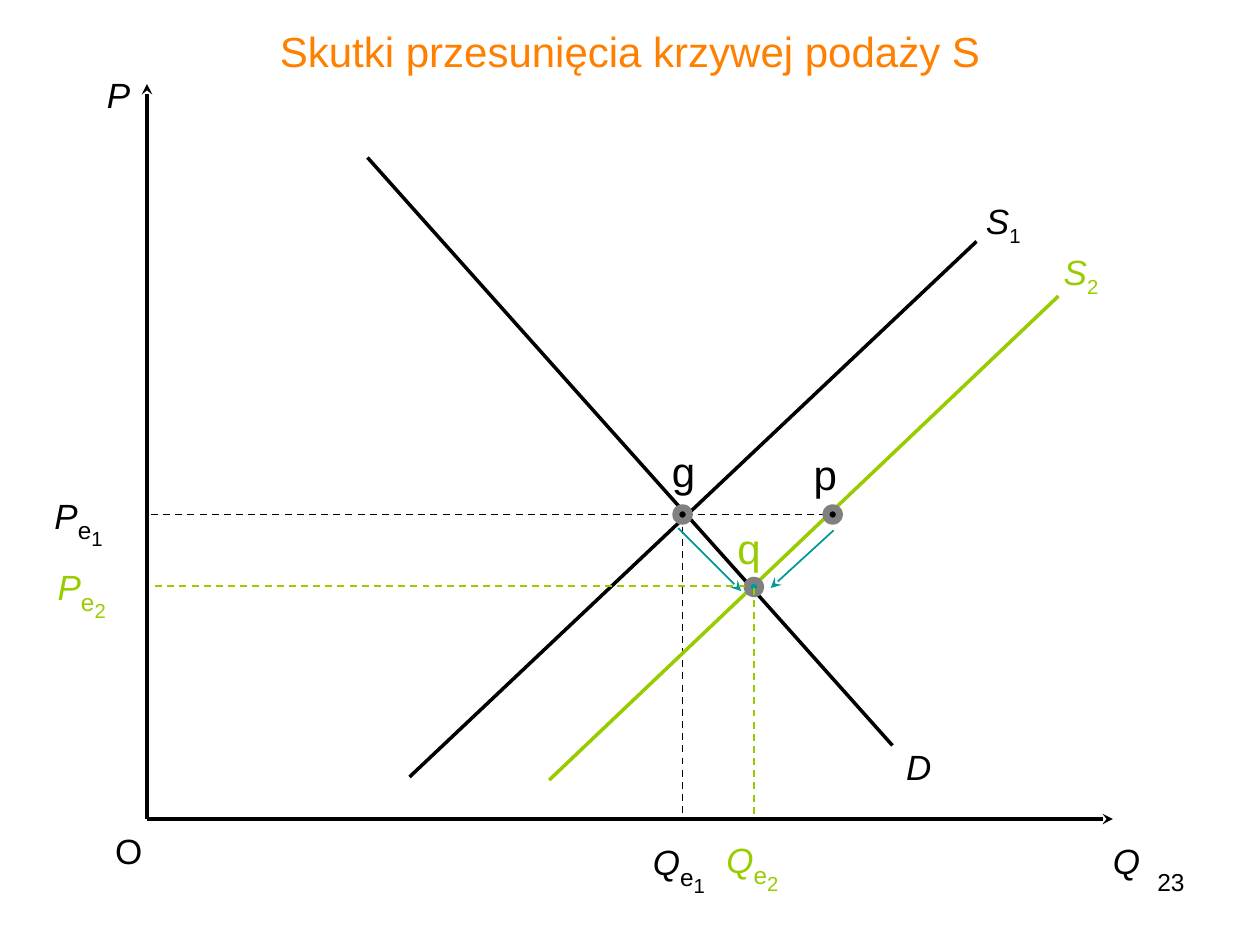
from lxml import etree
from pptx import Presentation
from pptx.dml.color import RGBColor
from pptx.enum import dml, shapes, text
from pptx.oxml import ns
from pptx.util import Pt

COLORS = {"ink": "000000", "shifted": "99CC00", "move": "009999",
          "ring": "808080", "heading": "FF8000"}
COLUMNS, ROWS = 120, 90

deck = Presentation()
deck.slide_width, deck.slide_height = Pt(720), Pt(540)
column, row = deck.slide_width / COLUMNS, deck.slide_height / ROWS
slide = deck.slides.add_slide(deck.slide_layouts[5])


def draw_line(start, end, color, width, dashed=False, arrow=False):
    line = slide.shapes.add_connector(
        shapes.MSO_CONNECTOR.STRAIGHT,
        round(start[0] * column), round(start[1] * row),
        round(end[0] * column), round(end[1] * row))
    line.line.color.rgb = RGBColor.from_string(COLORS[color])
    line.line.width = Pt(width)
    if dashed:
        line.line.dash_style = dml.MSO_LINE.DASH
    if arrow:
        etree.SubElement(line.line._get_or_add_ln(), ns.qn("a:tailEnd"), type="stealth")
    etree.SubElement(line._element.spPr, ns.qn("a:effectLst"))


def write(paragraph, wording, color, size, italic=False, baseline=0):
    run = paragraph.add_run()
    run.text = wording
    styling = {"name": "Arial", "size": Pt(size), "italic": italic, "bold": False}
    for key, value in styling.items():
        setattr(run.font, key, value)
    run.font.color.rgb = RGBColor.from_string(COLORS[color])
    if baseline:
        run._r.get_or_add_rPr().set("baseline", str(baseline * 1000))


heading = slide.shapes.title
heading_place = {"left": round(9 * column), "top": 0,
                 "width": round(102 * column), "height": round(9.7 * row)}
for key, value in heading_place.items():
    setattr(heading, key, value)
heading.text_frame.vertical_anchor = text.MSO_ANCHOR.MIDDLE
heading.text_frame.paragraphs[0].alignment = text.PP_ALIGN.CENTER
write(heading.text_frame.paragraphs[0], "Skutki przesunięcia krzywej podaży S", "heading", 24)

origin = (14, 78)
g, p, q = (65, 49), (79.3, 49), (71.8, 55.9)

for start, end in [((85, 71), (35, 15)), ((93, 23), (39, 74))]:
    draw_line(start, end, "ink", 2)
for start, end in [((78.7, g[1]), (origin[0], g[1])), (g, (g[0], origin[1]))]:
    draw_line(start, end, "ink", 1, dashed=True)
for axis_end in [(106, origin[1]), (origin[0], 8)]:
    draw_line(origin, axis_end, "ink", 2, arrow=True)
draw_line((52.3, 74.3), (100.8, 28.2), "shifted", 2)
for start, end in [((79.4, 50.5), (73.4, 56)), ((64.6, 50.3), (70.6, 56.3))]:
    draw_line(start, end, "move", 1, arrow=True)

DOT = 1.3
for (x, y), color in [(g, "ink"), (p, "ink"), (q, "move")]:
    dot = slide.shapes.add_shape(
        shapes.MSO_SHAPE.OVAL, round((x - DOT / 2) * column), round((y - DOT / 2) * row),
        round(DOT * column), round(DOT * row))
    dot.shadow.inherit = False
    dot.fill.solid()
    dot.fill.fore_color.rgb = RGBColor.from_string(COLORS[color])
    dot.line.color.rgb = RGBColor.from_string(COLORS["ring"])
    dot.line.width = Pt(4)

for start, end in [((71, 55.8), (14.3, 55.8)), ((q[0], 56), (q[0], 77.9))]:
    draw_line(start, end, "shifted", 1, dashed=True)

LEFT, CENTER, RIGHT = text.PP_ALIGN.LEFT, text.PP_ALIGN.CENTER, text.PP_ALIGN.RIGHT
axis_name = {"size": 20, "italic": True}
plain, point = {"size": 20}, {"size": 24}
curve_index = {"size": 20, "baseline": -25}
equilibrium = {"size": 24, "baseline": -25}
equilibrium_index = {"size": 20, "baseline": -50}
labels = [
    (9, 6.4, 4.4, 5.2, "ink", LEFT, True, [("P", axis_name)]),
    (104.8, 79.4, 5, 5.2, "ink", LEFT, False, [("Q", axis_name)]),
    (9.8, 78.4, 5, 5.2, "ink", LEFT, False, [("O", plain)]),
    (85.1, 70.4, 4.8, 5.2, "ink", CENTER, False, [("D", axis_name)]),
    (62.8, 41.8, 4.7, 6, "ink", LEFT, False, [("g", point)]),
    (76.3, 42.1, 4.7, 6, "ink", LEFT, False, [("p", point)]),
    (69, 49.2, 4.7, 6, "shifted", CENTER, False, [("q", point)]),
    (86, 82, 28, 6.2, "ink", RIGHT, True, [("23", {"size": 14})]),
]
for index, color, price, quantity, supply in [
        ("1", "ink", (4, 45.8), (61, 78.8), (92.6, 18.4)),
        ("2", "shifted", (4.3, 52.6), (68, 78.6), (100, 23.3))]:
    for letter, place in [("P", price), ("Q", quantity)]:
        labels.append((*place, 9, 5.2, color, LEFT, True,
                       [(letter, axis_name), ("e", equilibrium), (index, equilibrium_index)]))
    labels.append((*supply, 5.9, 5.2, color, CENTER, False,
                   [("S", axis_name), (index, curve_index)]))

for x, y, width, height, color, alignment, wrap, pieces in labels:
    label = slide.shapes.add_textbox(round(x * column), round(y * row),
                                     round(width * column), round(height * row))
    label.text_frame.word_wrap = wrap
    label.text_frame.paragraphs[0].alignment = alignment
    for wording, styling in pieces:
        write(label.text_frame.paragraphs[0], wording, color, **styling)

deck.save("out.pptx")
